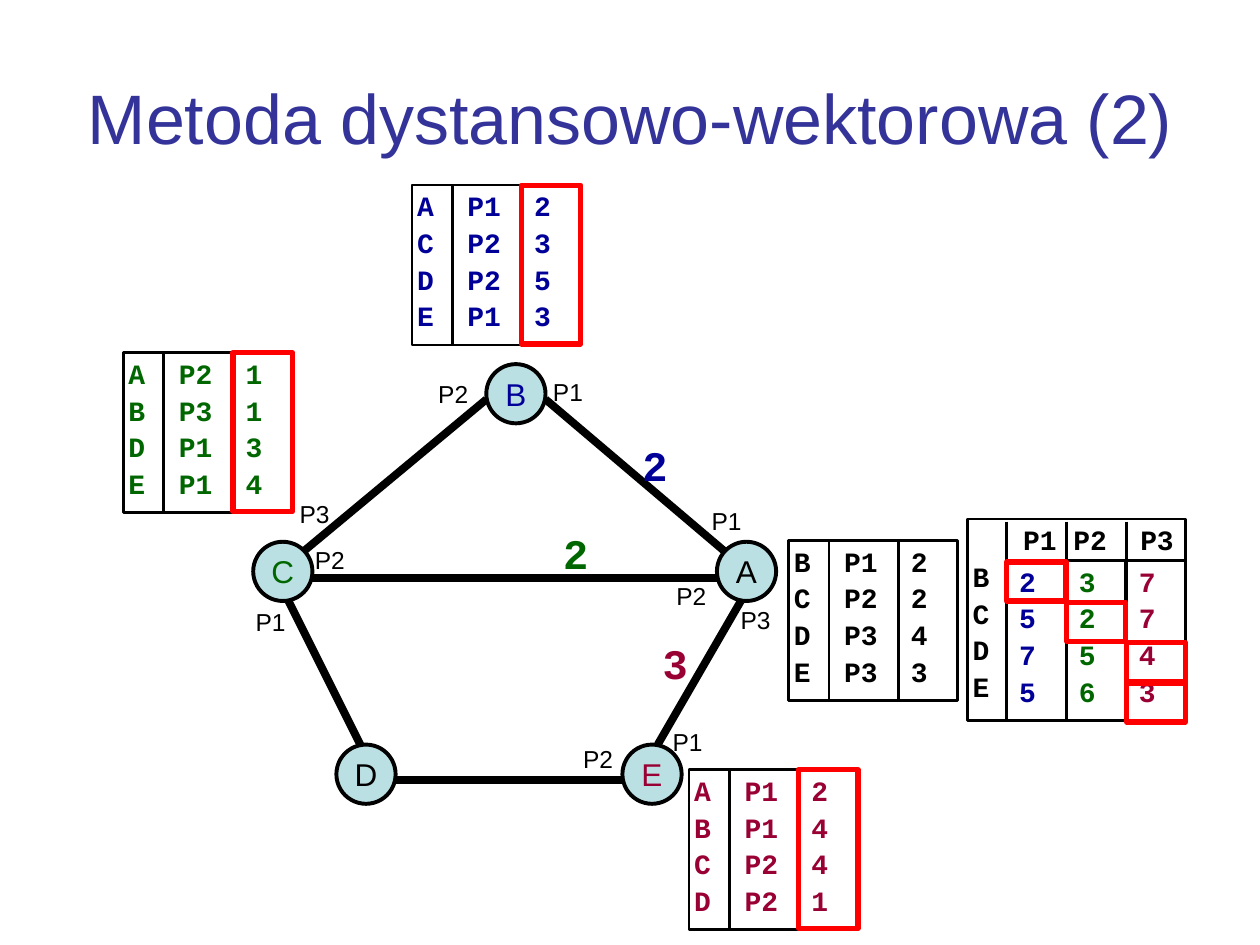
from lxml import etree
from pptx import Presentation
from pptx.dml.color import RGBColor
from pptx.enum.shapes import MSO_CONNECTOR, MSO_SHAPE
from pptx.enum.text import MSO_ANCHOR, PP_ALIGN
from pptx.oxml.ns import qn
from pptx.util import Inches, Pt

RECT, OVAL = MSO_SHAPE.RECTANGLE, MSO_SHAPE.OVAL
LINE = MSO_CONNECTOR.STRAIGHT
TOP, MIDDLE = MSO_ANCHOR.TOP, MSO_ANCHOR.MIDDLE
LEFT, CENTER = PP_ALIGN.LEFT, PP_ALIGN.CENTER

BLACK, WHITE, RED = "000000", "FFFFFF", "FF0000"
BLUE, GREEN, WINE = "000099", "006600", "990033"
MONO = "Courier New"

TITLE = "Metoda dystansowo-wektorowa (2)"
NODES = [("E", 4.94, 5.91, WINE), ("B", 3.86, 2.89, BLUE),
         ("C", 2.01, 4.3, GREEN), ("D", 2.67, 5.91, BLACK),
         ("A", 5.69, 4.3, BLACK)]
LINKS = [(2.38, 4.4, 3.86, 3.17), (4.33, 3.17, 5.78, 4.4),
         (2.29, 4.77, 2.86, 5.91), (4.94, 6.19, 3.14, 6.19),
         (2.48, 4.59, 5.69, 4.59), (5.88, 4.77, 5.22, 5.91)]
PORTS = [("P1", 5.55, 3.97), ("P2", 5.27, 4.56), ("P3", 5.78, 4.75),
         ("P1", 4.29, 2.94), ("P2", 3.38, 2.96), ("P1", 1.93, 4.77),
         ("P1", 5.24, 5.72), ("P2", 4.53, 5.86), ("P2", 2.4, 4.28),
         ("P3", 2.28, 3.91)]
COSTS = [("2", 5, 3.44, BLUE), ("2", 4.37, 4.14, GREEN),
         ("3", 5.16, 5.01, WINE)]
# left, top, colour, vector sent to A, rows
ROUTES = [
    (0.98, 2.8, GREEN, True, ["A P2 1", "B P3 1", "D P1 3", "E P1 4"]),
    (3.27, 1.47, BLUE, True, ["A P1 2", "C P2 3", "D P2 5", "E P1 3"]),
    (5.47, 6.11, WINE, True, ["A P1 2", "B P1 4", "C P2 4", "D P2 1"]),
    (6.26, 4.29, BLACK, False, ["B P1 2", "C P2 2", "D P3 4", "E P3 3"]),
]
MATRIX = ["\tP1\tP2\tP3", "B", "C", "D", "E"]
COLUMNS = [(BLUE, "2575"), (GREEN, "3256"), (WINE, "7743")]
BEST = [0, 1, 2, 2]  # cheapest column in each row

DIVS = (0.32, 0.87)
ROW, COL = 0.32, 0.47
STEP = 0.475

prs = Presentation()
prs.slide_width, prs.slide_height = Inches(10), Inches(7.5)
slide = prs.slides.add_slide(prs.slide_layouts[5])
shapes = slide.shapes


def color(code):
    return RGBColor.from_string(code)


def write(shape, lines, size=16, font="Arial", ink=BLACK, bold=False,
          align=LEFT, anchor=TOP, wrap=True, pad=None, tight=False, tabs=()):
    frame = shape.text_frame
    frame.word_wrap, frame.vertical_anchor = wrap, anchor
    if pad:
        (frame.margin_left, frame.margin_top, frame.margin_right,
         frame.margin_bottom) = map(Inches, pad)
    for i, line in enumerate(lines):
        para = frame.add_paragraph() if i else frame.paragraphs[0]
        para.alignment = align
        if tight:
            para.line_spacing, para.space_before = 0.8, Pt(5.6)
        if tabs:
            stops = etree.SubElement(para._p.get_or_add_pPr(), qn("a:tabLst"))
            for pos in tabs:
                etree.SubElement(stops, qn("a:tab"), pos=str(Inches(pos)),
                                 algn="l")
        run = para.add_run()
        run.text = line
        run.font.size, run.font.name, run.font.bold = Pt(size), font, bold
        run.font.color.rgb = color(ink)


def box(x, y, w, h, kind=RECT, fill=None, edge=BLACK, width=1.5):
    shape = shapes.add_shape(kind, *map(Inches, (x, y, w, h)))
    shape.shadow.inherit = False
    if fill:
        shape.fill.solid()
        shape.fill.fore_color.rgb = color(fill)
    else:
        shape.fill.background()
    shape.line.color.rgb, shape.line.width = color(edge), Pt(width)
    return shape


def link(x1, y1, x2, y2, width=1.5):
    line = shapes.add_connector(LINE, *map(Inches, (x1, y1, x2, y2)))
    line.line.color.rgb, line.line.width = color(BLACK), Pt(width)
    etree.SubElement(line._element.spPr, qn("a:effectLst"))


def label(text, x, y, w, h, **form):
    write(shapes.add_textbox(*map(Inches, (x, y, w, h))), [text], **form)


def mark(x, y, h):
    box(x, y, COL, h, edge=RED, width=3)


def grid(shape, lines, ink=BLACK, side=0.04, foot=0.08, tabs=()):
    write(shape, lines, font=MONO, ink=ink, bold=True, tight=True,
          pad=(side, 0.08, side, foot), tabs=tabs)


title = shapes.title
title.left, title.top, title.width, title.height = map(
    Inches, (0.5, 0.3, 9, 1.25))
write(title, [TITLE], size=40, ink="333399", align=CENTER, anchor=MIDDLE)

# Network
for ends in LINKS:
    link(*ends, width=4.5)
for name, x, y, ink in NODES:
    node = box(x, y, 0.47, 0.47, OVAL, "BBE0E3", width=2.25)
    write(node, [name], size=18, ink=ink, align=CENTER, anchor=MIDDLE,
          wrap=False)
for name, x, y in PORTS:
    label(name, x, y, 0.44, 0.33, size=14, wrap=False)

# Routing tables
for x, y, ink, sent, rows in ROUTES:
    grid(box(x, y, 1.34, 1.27), [row.replace(" ", "\t") for row in rows],
         ink, tabs=(0.4, 0.93))
    for div in DIVS:
        link(x + div, y, x + div, y + 1.26)
    if sent:
        mark(x + DIVS[1], y, 1.26)

for cost, x, y, ink in COSTS:
    label(cost, x, y, 0.39, 0.5, size=24, font=MONO, ink=ink, bold=True)

# Distance matrix of node A
grid(box(7.68, 4.12, 1.73, 1.6), MATRIX, foot=0.12, tabs=(0.4, 0.8, 1.33))
lefts = [7.99 + STEP * i for i in range(len(COLUMNS))]
for x, (ink, costs) in zip(lefts, COLUMNS):
    link(x, 4.14, x, 5.72)
    grid(box(x, 4.45, COL, 1.27, fill=WHITE), costs, ink, side=0.1)
for i, best in enumerate(BEST):
    mark(lefts[best], 4.46 + ROW * i, 0.31)

prs.save("out.pptx")
